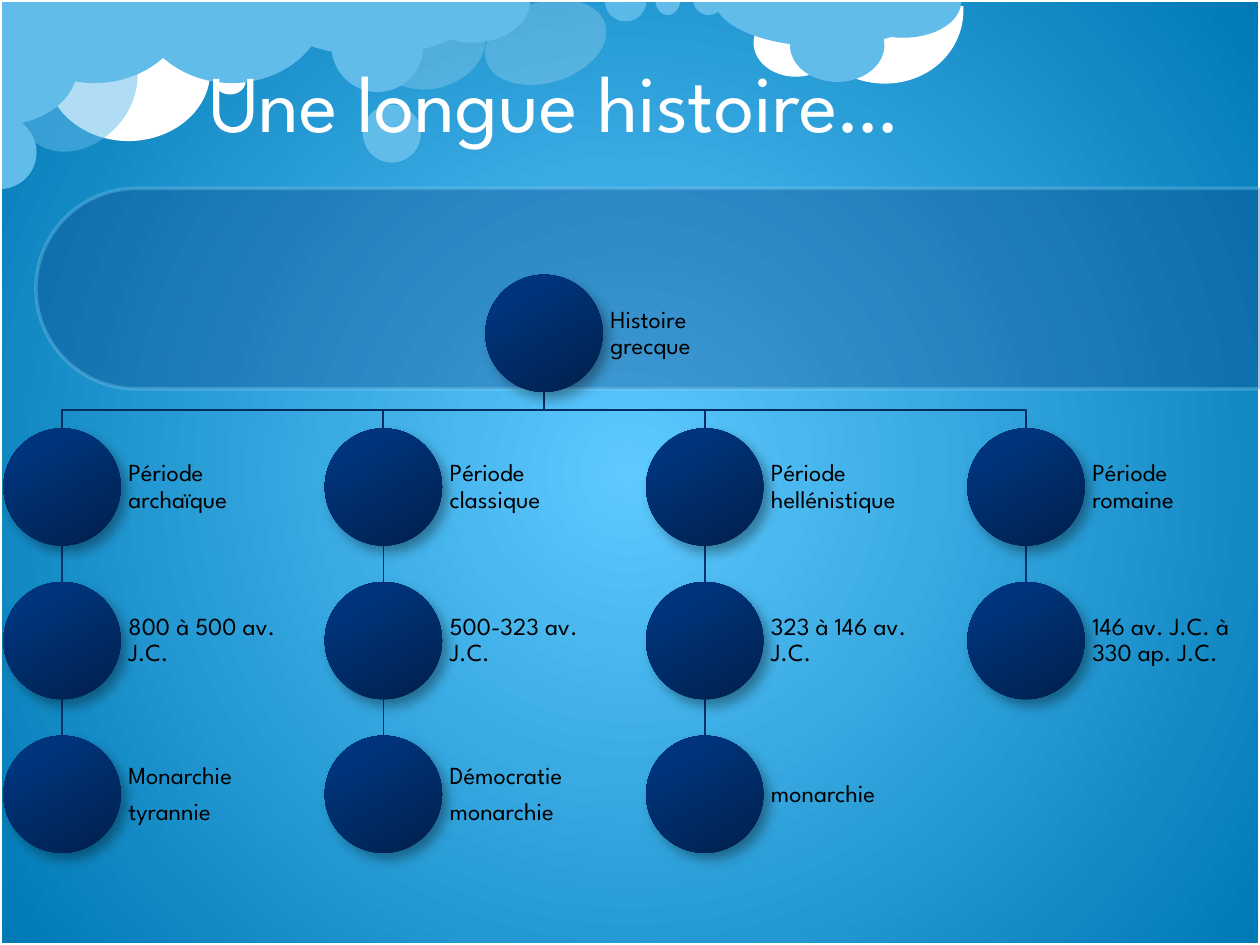
from lxml import etree
from pptx import Presentation
from pptx import util as u
from pptx.dml.color import RGBColor
from pptx.enum import shapes, text
from pptx.oxml import ns

Pt = u.Pt
SHAPE = shapes.MSO_SHAPE
FONT = "League Spartan"
WHITE = RGBColor(0xFF, 0xFF, 0xFF)
BLACK = RGBColor(0x00, 0x00, 0x00)
CLOUD = RGBColor(0x62, 0xBC, 0xE9)
PALE = RGBColor(0x8F, 0xD9, 0xFB)
PANEL = RGBColor(0x07, 0x37, 0x79)
SKY_CENTRE = RGBColor(0x5D, 0xC9, 0xFF)
SKY_EDGE = RGBColor(0x00, 0x79, 0xB5)
NODE_DARK = RGBColor(0x00, 0x20, 0x4C)
NODE_LIGHT = RGBColor(0x00, 0x34, 0x7C)
BRANCH = RGBColor(0x06, 0x2C, 0x61)
STEM = RGBColor(0x06, 0x32, 0x6E)

DIAMETER = 67
LEFT, TOP = 2, 157
COLUMN_PITCH, ROW_PITCH = 183.6, 87.8
LABEL_WIDTH = 100

ELLIPSE, PIE, ARC = SHAPE.OVAL, SHAPE.PIE, SHAPE.ARC
HALF_TURN = (0, 108)
CLOUDS = [
    (ELLIPSE, (223.9, -3.6, 46.1, 61.9), WHITE, 20, 72.8),
    (ELLIPSE, (26.6, 0.7, 93.6, 79.9), WHITE, 100, 0),
    (ARC, (460.1, -43.2, 87.1, 94.3), WHITE, 100, 106.5),
    (ELLIPSE, (430.6, 5, 48.2, 38.9), WHITE, 100, 0),
    (PIE, (-0.7, -47.5, 109.4, 95), CLOUD, 100, 0),
    (PIE, (149.8, -31.7, 126, 63.4), CLOUD, 100, 0),
    (ELLIPSE, (207.4, 59.8, 33.1, 33.1), CLOUD, 100, 0),
    (ELLIPSE, (13.7, 13, 61.2, 77), CLOUD, 50, 41.8),
    (PIE, (-20.9, 66.2, 41.8, 41.8), CLOUD, 100, 270),
    (ELLIPSE, (122.4, 38.9, 18, 15.1), WHITE, 100, 0),
    (PIE, (77.8, -47.5, 109.4, 95), CLOUD, 100, 0),
    (PIE, (408.2, -27.4, 126, 54), CLOUD, 100, 0),
    (ELLIPSE, (451.4, 5, 54, 41.8), CLOUD, 100, 0),
    (PIE, (483.1, -20.2, 66.2, 41.8), CLOUD, 100, 0),
    (ELLIPSE, (288.7, -11.5, 46.1, 71.3), WHITE, 20, 72.8),
    (PIE, (345.6, -11.5, 23.8, 23.8), PALE, 50, 0),
    (PIE, (374.4, -9.4, 14.4, 18), CLOUD, 100, 0),
    (PIE, (396, -9.4, 18, 18), CLOUD, 100, 0),
    (ELLIPSE, (189.4, 0, 52.6, 52.6), CLOUD, 100, 0),
    (PIE, (236.9, -23.8, 66.2, 48.2), CLOUD, 100, 0),
    (PIE, (-33.8, -6.5, 67, 89.3), CLOUD, 100, 270),
]
ADJUSTMENTS = {PIE: HALF_TURN, ARC: (151.8, 44.48)}
PERIODS = [
    [["Période archaïque"], ["800 à 500 av. J.C."], ["Monarchie", "tyrannie"]],
    [["Période classique"], ["500-323 av. J.C."], ["Démocratie", "monarchie"]],
    [["Période hellénistique"], ["323 à 146 av. J.C."], ["monarchie"]],
    [["Période romaine"], ["146 av. J.C. à 330 ap. J.C."]],
]


def apply(target, values):
    """Set each named attribute of the target."""
    for name, value in values.items():
        setattr(target, name, value)


def set_opacity(fill_parent, percent):
    """Give the first colour under an element an opacity."""
    color = fill_parent.find(".//" + ns.qn("a:srgbClr"))
    etree.SubElement(color, ns.qn("a:alpha"), val=str(percent * 1000))


def set_gradient(fill, stops):
    """Make a two-stop gradient fill."""
    fill.gradient()
    for stop, (position, color) in zip(fill.gradient_stops, stops):
        stop.position = position
        stop.color.rgb = color


def paint_background(slide):
    """Fill the slide with a gradient that spreads from its centre."""
    set_gradient(slide.background.fill, [(0, SKY_CENTRE), (1, SKY_EDGE)])
    linear = slide.background._cSld.find(".//" + ns.qn("a:lin"))
    radial = etree.Element(ns.qn("a:path"), path="circle")
    sides = dict.fromkeys("ltrb", "50000")
    etree.SubElement(radial, ns.qn("a:fillToRect"), sides)
    linear.getparent().replace(linear, radial)


def add_plain_shape(slide, kind, box, color=None, opacity=100, rotation=0, adjustments=()):
    """Add a preset shape without line or shadow."""
    shape = slide.shapes.add_shape(kind, *map(Pt, box))
    shape.rotation = rotation
    shape.shadow.inherit = False
    for index, value in enumerate(adjustments):
        shape.adjustments[index] = value
    if color is None:
        shape.fill.background()
    else:
        shape.fill.solid()
        shape.fill.fore_color.rgb = color
    if opacity < 100:
        set_opacity(shape._element.spPr, opacity)
    shape.line.fill.background()
    return shape


def set_line(shape, color, width):
    """Give a shape or connector a solid line."""
    shape.line.color.rgb = color
    shape.line.width = Pt(width)


def add_scenery(slide):
    """Draw the clouds, the slide frame and the title band."""
    for kind, box, color, opacity, rotation in CLOUDS:
        add_plain_shape(slide, kind, box, color, opacity, rotation, ADJUSTMENTS.get(kind, ()))
    frame = add_plain_shape(slide, SHAPE.RECTANGLE, (0, 0, 720, 540))
    set_line(frame, WHITE, 2)
    band = add_plain_shape(slide, SHAPE.ROUND_2_SAME_RECTANGLE, (313.2, -185, 114.5, 699.8),
                           PANEL, 30, 270, (0.5, 0))
    set_line(band, PALE, 2)
    set_opacity(band._element.spPr.find(ns.qn("a:ln")), 30)


def write_paragraphs(frame, lines, color, size, layout):
    """Fill a text frame with one formatted paragraph a line."""
    for index, line in enumerate(lines):
        paragraph = frame.add_paragraph() if index else frame.paragraphs[0]
        paragraph.text = line
        apply(paragraph, {"alignment": text.PP_ALIGN.LEFT, **layout})
        apply(paragraph.font, {"name": FONT, "size": Pt(size)})
        paragraph.font.color.rgb = color


def add_title(slide, words):
    """Place the title above the scenery."""
    title = slide.shapes.title
    apply(title, {"left": Pt(112.3), "top": Pt(0), "width": Pt(607.7), "height": Pt(113.8)})
    apply(title.text_frame, {"vertical_anchor": text.MSO_ANCHOR.MIDDLE, "word_wrap": True})
    write_paragraphs(title.text_frame, [words], WHITE, 46, {"line_spacing": Pt(56)})
    slide.shapes._spTree.append(title._element)


def node_box(column, row):
    """Return the left and top of a node in the tree."""
    return LEFT + column * COLUMN_PITCH, TOP + row * ROW_PITCH


def add_node(slide, column, row, lines):
    """Add a shaded disc with its label on the right."""
    left, top = node_box(column, row)
    disc = add_plain_shape(slide, ELLIPSE, (left, top, DIAMETER, DIAMETER))
    set_gradient(disc.fill, [(0, NODE_DARK), (0.8, NODE_LIGHT)])
    disc.fill.gradient_angle = 120
    effects = disc._element.spPr.find(ns.qn("a:effectLst"))
    shadow = etree.SubElement(effects, ns.qn("a:outerShdw"), blurRad=str(Pt(7)),
                              dist=str(Pt(5)), dir=str(50 * 60000), rotWithShape="0")
    etree.SubElement(shadow, ns.qn("a:srgbClr"), val=str(BLACK))
    set_opacity(shadow, 35)
    label = slide.shapes.add_textbox(*map(Pt, (left + DIAMETER, top, LABEL_WIDTH, DIAMETER)))
    margins = {f"margin_{side}": Pt(4.4) for side in ("left", "top", "right", "bottom")}
    apply(label.text_frame, {"word_wrap": True, "vertical_anchor": text.MSO_ANCHOR.MIDDLE, **margins})
    write_paragraphs(label.text_frame, lines, BLACK, 14,
                     {"line_spacing": 0.9, "space_after": Pt(5.7)})


def add_stem(slide, column, row):
    """Join a node to the one below it."""
    left, top = node_box(column, row)
    x = Pt(left + DIAMETER / 2)
    stem = slide.shapes.add_connector(shapes.MSO_CONNECTOR.STRAIGHT, x, Pt(top + DIAMETER),
                                      x, Pt(top + ROW_PITCH))
    set_line(stem, STEM, 1)
    etree.SubElement(stem._element.spPr, ns.qn("a:effectLst"))


def add_branch(slide, root_column, column):
    """Draw the bent line from the root to the head of a column."""
    root_x, child_x = (Pt(node_box(c, 0)[0] + DIAMETER / 2) for c in (root_column, column))
    start, end = Pt(TOP + DIAMETER), Pt(TOP + ROW_PITCH)
    middle = (start + end) // 2
    builder = slide.shapes.build_freeform(root_x, start)
    builder.add_line_segments([(root_x, middle), (child_x, middle), (child_x, end)], close=False)
    branch = builder.convert_to_shape()
    branch.fill.background()
    branch.shadow.inherit = False
    set_line(branch, BRANCH, 1)


def add_tree(slide):
    """Draw the tree of periods with its lines behind the nodes."""
    root_column = (len(PERIODS) - 1) / 2
    for column, period in enumerate(PERIODS):
        add_branch(slide, root_column, column)
        for row in range(1, len(period)):
            add_stem(slide, column, row)
    add_node(slide, root_column, 0, ["Histoire grecque"])
    for column, period in enumerate(PERIODS):
        for row, lines in enumerate(period, 1):
            add_node(slide, column, row, lines)


def main():
    """Build and save the slide."""
    presentation = Presentation()
    apply(presentation, {"slide_width": Pt(720), "slide_height": Pt(540)})
    slide = presentation.slides.add_slide(presentation.slide_layouts[5])
    paint_background(slide)
    add_scenery(slide)
    add_title(slide, "Une longue histoire…")
    add_tree(slide)
    presentation.save("out.pptx")


if __name__ == "__main__":
    main()
